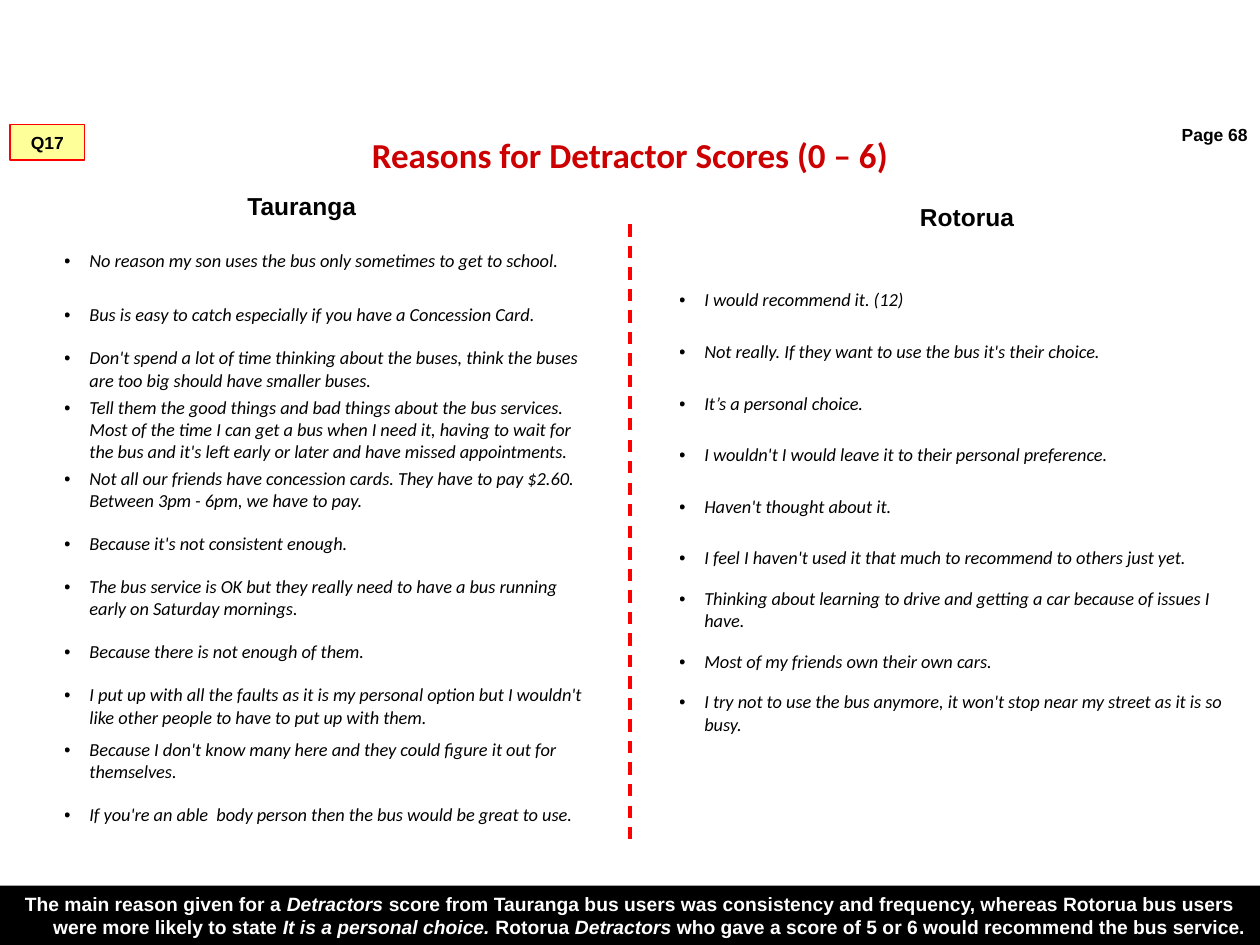
from lxml import etree
from pptx import Presentation
from pptx.dml.color import RGBColor
from pptx.enum.dml import MSO_LINE
from pptx.enum.shapes import MSO_CONNECTOR, MSO_SHAPE
from pptx.enum.text import MSO_ANCHOR, PP_ALIGN
from pptx.oxml.ns import qn
from pptx.util import Inches, Pt

LEFT, CENTER, RIGHT = PP_ALIGN.LEFT, PP_ALIGN.CENTER, PP_ALIGN.RIGHT
TOP, MIDDLE = MSO_ANCHOR.TOP, MSO_ANCHOR.MIDDLE
RECT, STRAIGHT, DASH = MSO_SHAPE.RECTANGLE, MSO_CONNECTOR.STRAIGHT, MSO_LINE.DASH


def color(value):
    return RGBColor.from_string(value)


def add_text(tf, runs, size=10, font="Arial", fill="000000", bold=True,
             align=CENTER, indent=0, bullet=None):
    tf.word_wrap = True
    p = tf.paragraphs[0]
    p.alignment = align
    if indent:
        pPr = p._p.get_or_add_pPr()
        pPr.set("marL", str(Inches(indent)))
        pPr.set("indent", str(-Inches(indent)))
        if bullet:
            etree.SubElement(pPr, qn("a:buFont")).set("typeface", "Arial")
            etree.SubElement(pPr, qn("a:buChar")).set("char", bullet)
    for text, italic in runs:
        r = p.add_run()
        r.text = text
        r.font.size = Pt(size)
        r.font.name = font
        r.font.bold = bold
        r.font.italic = italic
        r.font.color.rgb = color(fill)


prs = Presentation()
prs.slide_width, prs.slide_height = Inches(10), Inches(7.5)
s = prs.slides.add_slide(prs.slide_layouts[6])

labels = [
    ("Reasons for Detractor Scores (0 – 6)", 0, 0.6, 10, 1.25, MIDDLE,
     dict(size=20, font="Calibri", fill="CC0000")),
    ("Tauranga", 1.45, 1.47, 1.89, 0.25, TOP, dict(size=14)),
    ("Rotorua", 6.73, 1.55, 1.89, 0.25, TOP, dict(size=14)),
    ("Page 68", 7.67, 0.92, 2.33, 0.3, MIDDLE, dict(align=RIGHT)),
]
for text, x, y, w, h, anchor, style in labels:
    sp = s.shapes.add_textbox(Inches(x), Inches(y), Inches(w), Inches(h))
    sp.text_frame.vertical_anchor = anchor
    add_text(sp.text_frame, [(text, False)], **style)

summary = [
    ("The main reason given for a ", False),
    ("Detractors ", True),
    ("score from Tauranga bus users was consistency and frequency, whereas "
     "Rotorua bus users were more likely to state ", False),
    ("It is a personal choice. ", True),
    ("Rotorua ", False),
    ("Detractors ", True),
    ("who gave a score of 5 or 6 would recommend the bus service.", False),
]
boxes = [
    (0.08, 0.99, 0.59, 0.28, "FFFF99", "FF0000", [("Q17", False)], {}),
    (0, 7.03, 10, 0.47, "000000", None, summary,
     dict(size=11, fill="FFFFFF", indent=0.31)),
]
for x, y, w, h, fill, line, runs, style in boxes:
    sp = s.shapes.add_shape(RECT, Inches(x), Inches(y), Inches(w), Inches(h))
    sp.shadow.inherit = False
    sp.fill.solid()
    sp.fill.fore_color.rgb = color(fill)
    if line:
        sp.line.color.rgb = color(line)
        sp.line.width = Pt(0.75)
    else:
        sp.line.fill.background()
    sp.text_frame.vertical_anchor = MIDDLE
    add_text(sp.text_frame, runs, **style)

divider = s.shapes.add_connector(STRAIGHT, Inches(5), Inches(1.78), Inches(5), Inches(6.66))
divider.line.color.rgb = color("FF0000")
divider.line.width = Pt(1.75)
divider.line.dash_style = DASH
etree.SubElement(divider._element.spPr, qn("a:effectLst"))

tauranga = [
    "No reason my son uses the bus only sometimes to get to school.",
    "Bus is easy to catch especially if you have a Concession Card.",
    "Don't spend a lot of time thinking about the buses, think the buses are too big "
    "should have smaller buses.",
    "Tell them the good things and bad things about the bus services. Most of the time "
    "I can get a bus when I need it, having to wait for the bus and it's left early or "
    "later and have missed appointments.",
    "Not all our friends have concession cards. They have to pay $2.60. Between 3pm - 6pm, "
    "we have to pay.",
    "Because it's not consistent enough.",
    "The bus service is OK but they really need to have a bus running early on Saturday "
    "mornings.",
    "Because there is not enough of them.",
    "I put up with all the faults as it is my personal option but I wouldn't like other "
    "people to have to put up with them.",
    "Because I don't know many here and they could figure it out for themselves.",
    "If you're an able  body person then the bus would be great to use.",
]
rotorua = [
    "I would recommend it. (12)",
    "Not really. If they want to use the bus it's their choice.",
    "It’s a personal choice.",
    "I wouldn't I would leave it to their personal preference.",
    "Haven't thought about it.",
    "I feel I haven't used it that much to recommend to others just yet.",
    "Thinking about learning to drive and getting a car because of issues I have.",
    "Most of my friends own their own cars.",
    "I try not to use the bus anymore, it won't stop near my street as it is so busy.",
]
tables = [
    (tauranga, 0.51, 1.86, 4.16, 0.43, {3: 0.5}),
    (rotorua, 5.39, 2.18, 4.49, 0.41, {}),
]
for reasons, x, y, w, row_h, tall_rows in tables:
    heights = [tall_rows.get(i, row_h) for i in range(len(reasons))]
    table = s.shapes.add_table(len(reasons), 1, Inches(x), Inches(y), Inches(w),
                               Inches(sum(heights))).table
    table.first_row = table.horz_banding = False
    for i, (reason, height) in enumerate(zip(reasons, heights)):
        table.rows[i].height = Inches(height)
        cell = table.cell(i, 0)
        cell.fill.background()
        cell.vertical_anchor = MIDDLE
        cell.margin_left = cell.margin_right = cell.margin_top = cell.margin_bottom = 0
        add_text(cell.text_frame, [(reason, True)], size=10.5, font="Calibri",
                 bold=False, align=LEFT, indent=0.2, bullet="•")

prs.save("out.pptx")
